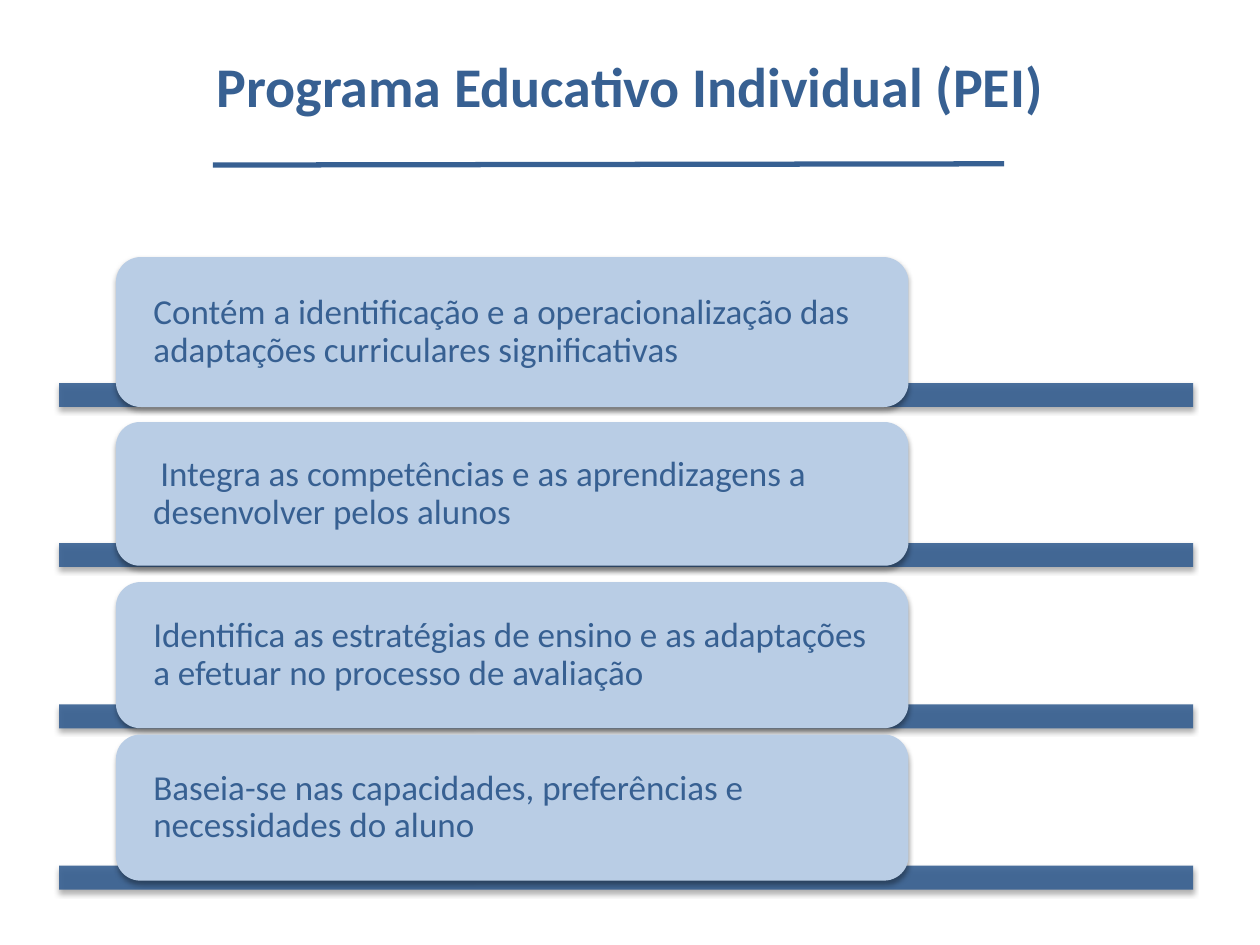
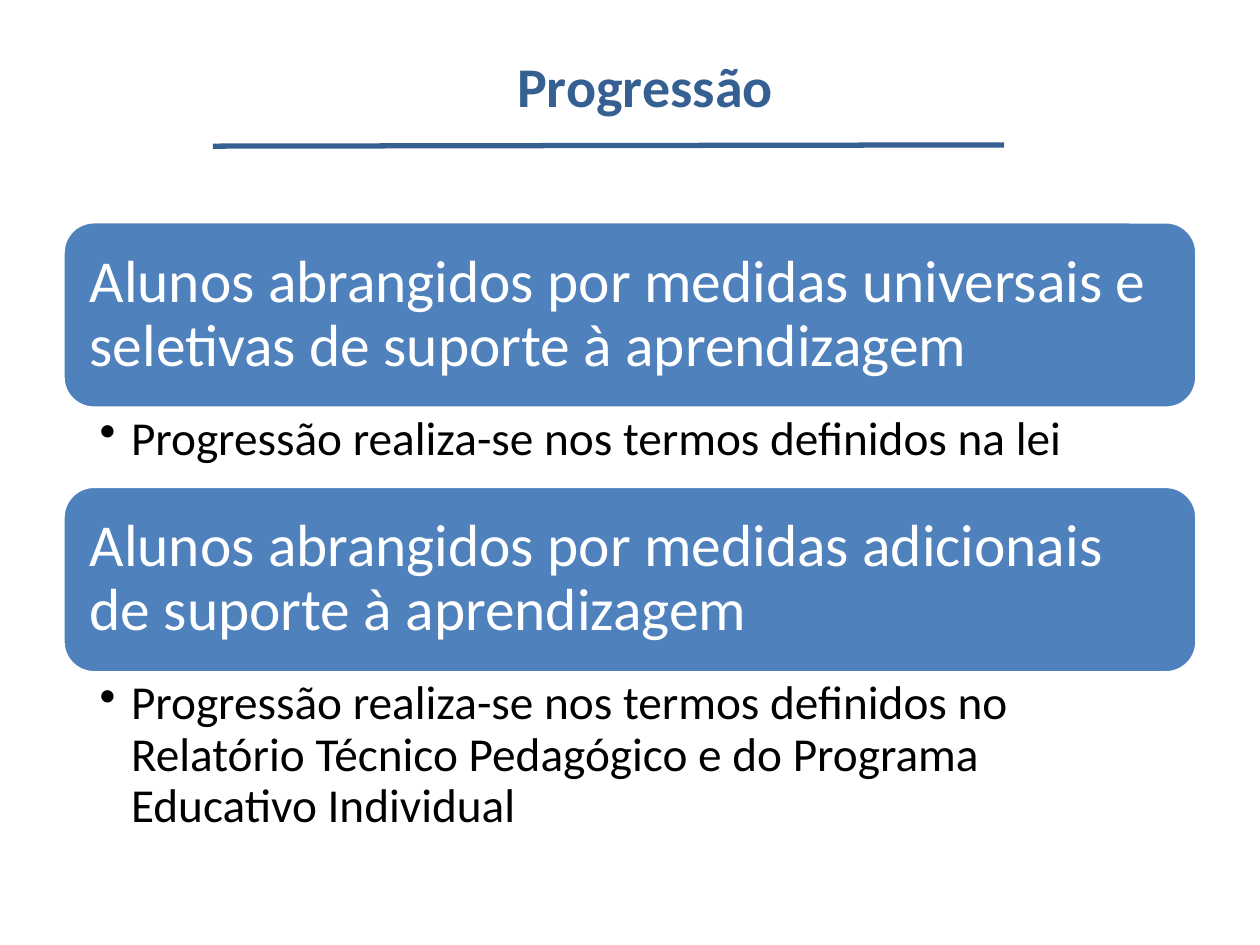
from lxml import etree
from pptx import Presentation
from pptx import util as u
from pptx.dml.color import RGBColor
from pptx.enum import shapes, text
from pptx.oxml import ns

COLORS = {"navy": "376092", "pale": "B9CDE5", "blue": "4F81BD",
          "white": "FFFFFF", "black": "000000"}
FONT = "Calibri"


def add_xml(parent, tag, **attrs):
    return etree.SubElement(parent, ns.qn(tag), {k: str(v) for k, v in attrs.items()})


class Deck:
    def __init__(self):
        self.prs = Presentation()
        self.prs.slide_width, self.prs.slide_height = u.Inches(10), u.Inches(7.5)
        self.s = None

    def color(self, name):
        return RGBColor.from_string(COLORS[name])

    def box(self, *at):
        return [u.Inches(v) for v in at]

    def new_slide(self):
        self.s = self.prs.slides.add_slide(self.prs.slide_layouts[6])

    def set_text(self, sp, runs, color, insets, anchor, align=text.PP_ALIGN.LEFT,
                 spacing=0.9, bold=False):
        tf = sp.text_frame
        tf.word_wrap = True
        tf.vertical_anchor = anchor
        tf.margin_left, tf.margin_top, tf.margin_right, tf.margin_bottom = self.box(*insets)
        p = tf.paragraphs[0]
        p.alignment = align
        p.line_spacing = spacing
        for words, size in runs:
            r = p.add_run()
            r.text = words
            r.font.name, r.font.size, r.font.bold = FONT, u.Pt(size), bold
            r.font.color.rgb = self.color(color)
        return p

    def title(self, words, left, rule_top):
        sp = self.s.shapes.add_textbox(*self.box(left, 0.05, 9, 1.25))
        self.set_text(sp, [(words, 32)], "navy", (0.1, 0.05, 0.1, 0.05),
                      text.MSO_ANCHOR.MIDDLE, text.PP_ALIGN.CENTER, 1.0, True)
        rule = self.s.shapes.add_connector(
            shapes.MSO_CONNECTOR.STRAIGHT,
            *self.box(1.69, rule_top + 0.01, 7.97, rule_top))
        rule.line.color.rgb = self.color("navy")
        rule.line.width = u.Pt(3)
        add_xml(rule._element.spPr, "a:effectLst")

    def shape(self, kind, at, fill, line=None, shadow=False):
        sp = self.s.shapes.add_shape(kind, *self.box(*at))
        sp.fill.solid()
        sp.fill.fore_color.rgb = self.color(fill)
        if line:
            sp.line.color.rgb = self.color(line)
            sp.line.width = u.Pt(2)
        else:
            sp.line.fill.background()
        sp.shadow.inherit = False
        if shadow:
            effects = sp._element.spPr.find(ns.qn("a:effectLst"))
            outer = add_xml(effects, "a:outerShdw", blurRad=u.Pt(3.1), dist=u.Pt(1.8),
                            dir=5400000, rotWithShape=0)
            tint = add_xml(outer, "a:srgbClr", val=COLORS["black"])
            add_xml(tint, "a:alpha", val=35000)
        return sp

    def bar(self, top):
        sp = self.shape(shapes.MSO_SHAPE.RECTANGLE, (0.47, top, 9, 0.19), "navy", shadow=True)
        tint = sp._element.spPr.find(ns.qn("a:solidFill"))[0]
        add_xml(tint, "a:alpha", val=90000)

    def card(self, top, height, runs):
        sp = self.shape(shapes.MSO_SHAPE.ROUNDED_RECTANGLE, (0.92, top, 6.29, height),
                        "pale", shadow=True)
        self.set_text(sp, runs, "navy", (0.24, 0, 0.24, 0), text.MSO_ANCHOR.MIDDLE)

    def banner(self, top, height, words):
        sp = self.shape(shapes.MSO_SHAPE.ROUNDED_RECTANGLE, (0.5, top, 9, height),
                        "blue", line="white")
        self.set_text(sp, [(words, 34)], "white", (0.14,) * 4, text.MSO_ANCHOR.MIDDLE)

    def bullet(self, top, height, words):
        sp = self.s.shapes.add_textbox(*self.box(0.5, top, 9, height))
        p = self.set_text(sp, [(words, 27)], "black", (0.29, 0.05, 0.26, 0.05),
                          text.MSO_ANCHOR.TOP)
        pPr = p._p.get_or_add_pPr()
        pPr.set("marL", str(u.Inches(0.25)))
        pPr.set("indent", str(-u.Inches(0.25)))
        add_xml(pPr, "a:buChar", char="•")


def pei_slide(deck):
    deck.new_slide()
    deck.title("Programa Educativo Individual (PEI)", 0.5, 1.3)
    cards = [
        (3.04, 2.04, 1.19, [("Contém a identificação e a operacionalização das "
                             "adaptações curriculares significativas", 20)]),
        (4.31, 3.35, 1.14, [(" ", 18), ("Integra as competências e as aprendizagens a "
                                        "desenvolver pelos alunos", 20)]),
        (5.59, 4.62, 1.16, [("Identifica as estratégias de ensino e as adaptações "
                             "a efetuar no processo de avaliação", 20)]),
        (6.87, 5.83, 1.16, [("Baseia-se nas capacidades, preferências e "
                             "necessidades do aluno", 20)]),
    ]
    for bar_top, card_top, height, runs in cards:
        deck.bar(bar_top)
        deck.card(card_top, height, runs)


def progress_slide(deck):
    deck.new_slide()
    groups = [
        ("Alunos abrangidos por medidas universais e seletivas de suporte à aprendizagem",
         "Progressão realiza-se nos termos definidos na lei", 0.62),
        ("Alunos abrangidos por medidas adicionais de suporte à aprendizagem",
         "Progressão realiza-se nos termos definidos no Relatório Técnico Pedagógico "
         "e do Programa Educativo Individual", 1.35),
    ]
    top, banner_height = 1.76, 1.48
    for heading, detail, detail_height in groups:
        deck.banner(top, banner_height, heading)
        deck.bullet(top + banner_height, detail_height, detail)
        top += banner_height + detail_height
    deck.title("Progressão ", 0.67, 1.15)


def main():
    deck = Deck()
    pei_slide(deck)
    progress_slide(deck)
    deck.prs.save("out.pptx")


if __name__ == "__main__":
    main()
